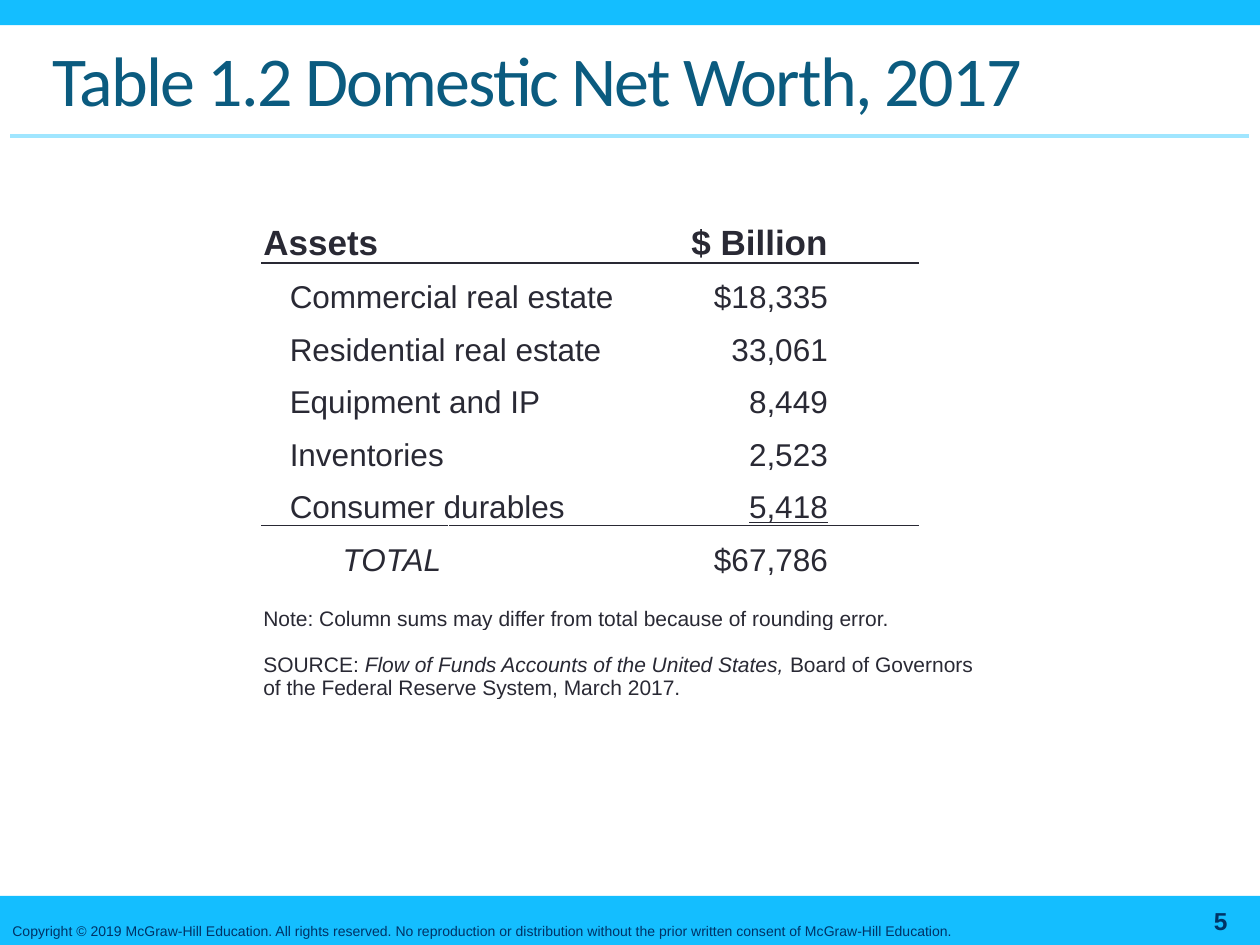
from dataclasses import dataclass

from lxml import etree
from pptx import Presentation
from pptx.dml.color import RGBColor
from pptx.enum.shapes import MSO_CONNECTOR, MSO_SHAPE
from pptx.enum.text import MSO_ANCHOR, PP_ALIGN
from pptx.oxml.ns import qn
from pptx.util import Inches, Pt

RECTANGLE = MSO_SHAPE.RECTANGLE
STRAIGHT = MSO_CONNECTOR.STRAIGHT
LEFT, RIGHT = PP_ALIGN.LEFT, PP_ALIGN.RIGHT
MIDDLE, BOTTOM = MSO_ANCHOR.MIDDLE, MSO_ANCHOR.BOTTOM

COLORS = {
    "band": "14BEFF",
    "rule": "A0E6FF",
    "footer": "003366",
    "title": "0B5B7F",
    "body": "292934",
}
COLUMN_WIDTHS = (1.48, 1.58, 1.44, 0.72, 0.45)
ROW_HEIGHT = 0.417
SOURCE_HEIGHT = 0.55
RULED_COLUMNS = 4
VALUE_COLUMN = 2


@dataclass(frozen=True)
class AssetRow:
    label: str
    value: str
    indent: float = 0.21
    label_columns: int = 2
    size: int = 18
    bold: bool = False
    italic: bool = False
    underline: bool = False
    ruled_below: bool = False


@dataclass(frozen=True)
class Band:
    top: float
    height: float


ASSET_ROWS = (
    AssetRow("Assets", "$ Billion", indent=0, label_columns=1, size=20, bold=True, ruled_below=True),
    AssetRow("Commercial real estate", "$18,335"),
    AssetRow("Residential real estate", "33,061"),
    AssetRow("Equipment and IP", "8,449"),
    AssetRow("Inventories", "2,523", label_columns=1),
    AssetRow("Consumer durables", "5,418", underline=True, ruled_below=True),
    AssetRow("TOTAL", "$67,786", indent=0.63, label_columns=1, italic=True),
)
NOTES = (
    (("Note: Column sums may differ from total because of rounding error.", False),),
    (
        ("SOURCE: ", False),
        ("Flow of Funds Accounts of the United States,", True),
        (" Board of Governors of the Federal Reserve System, March 2017.", False),
    ),
)
BANDS = (Band(0, 0.2), Band(7.11, 0.4))


def write_text(paragraph, text, *, size, color="body", name="Arial", bold=False,
               italic=False, underline=False, align=LEFT, spacing=0):
    paragraph.alignment = align
    run = paragraph.add_run()
    run.text = text
    font = run.font
    font.size, font.name = Pt(size), name
    font.bold, font.italic, font.underline = bold, italic, underline
    font.color.rgb = RGBColor.from_string(COLORS[color])
    if spacing:
        run._r.get_or_add_rPr().set("spc", str(spacing * 100))


def add_text(slide, bounds: tuple, text: str, anchor, **text_format) -> None:
    frame = slide.shapes.add_textbox(*map(Inches, bounds)).text_frame
    frame.word_wrap = True
    frame.vertical_anchor = anchor
    write_text(frame.paragraphs[0], text, **text_format)


def add_band(slide, band: Band) -> None:
    shape = slide.shapes.add_shape(RECTANGLE, 0, Inches(band.top), Inches(10), Inches(band.height))
    shape.shadow.inherit = False
    shape.fill.solid()
    shape.fill.fore_color.rgb = RGBColor.from_string(COLORS["band"])
    shape.line.fill.background()


def add_title_rule(slide) -> None:
    connector = slide.shapes.add_connector(
        STRAIGHT, Inches(0.08), Inches(1.08), Inches(9.91), Inches(1.08))
    connector.line.color.rgb = RGBColor.from_string(COLORS["rule"])
    connector.line.width = Pt(2.25)
    etree.SubElement(connector._element.spPr, qn("a:effectLst"))


def set_border(cell, tag: str) -> None:
    line = etree.Element(qn(tag), w=str(Pt(1)))
    fill = etree.SubElement(line, qn("a:solidFill"))
    etree.SubElement(fill, qn("a:srgbClr"), val=COLORS["body"])
    cell._tc.get_or_add_tcPr().insert(0, line)


def prepare_cell(cell) -> None:
    cell.fill.background()
    cell.vertical_anchor = BOTTOM
    cell.margin_left = cell.margin_right = cell.margin_top = Inches(0.01)
    cell.margin_bottom = 0


def fill_asset_row(table, index: int, row: AssetRow) -> None:
    label = table.cell(index, 0)
    if row.label_columns > 1:
        label.merge(table.cell(index, row.label_columns - 1))
    label.margin_left = Inches(0.01 + row.indent)
    write_text(label.text_frame.paragraphs[0], row.label,
               size=row.size, bold=row.bold, italic=row.italic)
    write_text(table.cell(index, VALUE_COLUMN).text_frame.paragraphs[0], row.value,
               size=row.size, bold=row.bold, underline=row.underline, align=RIGHT)
    if row.ruled_below:
        for column in range(RULED_COLUMNS):
            set_border(table.cell(index, column), "a:lnB")
            set_border(table.cell(index + 1, column), "a:lnT")


def add_net_worth_table(slide) -> None:
    row_count = len(ASSET_ROWS) + len(NOTES)
    table = slide.shapes.add_table(
        row_count, len(COLUMN_WIDTHS), Inches(2.08), Inches(1.67),
        Inches(sum(COLUMN_WIDTHS)), Inches(ROW_HEIGHT * row_count)).table
    table.first_row = table.horz_banding = False
    for column, width in zip(table.columns, COLUMN_WIDTHS):
        column.width = Inches(width)
    for row in table.rows:
        row.height = Inches(ROW_HEIGHT)
    table.rows[row_count - 1].height = Inches(SOURCE_HEIGHT)
    for cell in table.iter_cells():
        prepare_cell(cell)
    for index, row in enumerate(ASSET_ROWS):
        fill_asset_row(table, index, row)
    for index, parts in enumerate(NOTES, len(ASSET_ROWS)):
        cell = table.cell(index, 0)
        cell.merge(table.cell(index, len(COLUMN_WIDTHS) - 1))
        for text, italic in parts:
            write_text(cell.text_frame.paragraphs[0], text, size=12, italic=italic)


def main() -> None:
    presentation = Presentation()
    presentation.slide_width, presentation.slide_height = Inches(10), Inches(7.5)
    slide = presentation.slides.add_slide(presentation.slide_layouts[6])
    for band in BANDS:
        add_band(slide, band)
    add_title_rule(slide)
    add_text(slide, (8.67, 7.13, 1.17, 0.36), "5", MIDDLE,
             size=14, color="footer", bold=True, align=RIGHT)
    add_text(slide, (0, 7.22, 10, 0.28),
             "Copyright © 2019 McGraw-Hill Education. All rights reserved. No reproduction "
             "or distribution without the prior written consent of McGraw-Hill Education.",
             BOTTOM, size=8, color="footer")
    add_text(slide, (0.32, 0.17, 9.37, 0.91), "Table 1.2 Domestic Net Worth, 2017", MIDDLE,
             size=40, color="title", name="Calibri", spacing=-1)
    add_net_worth_table(slide)
    presentation.save("out.pptx")


if __name__ == "__main__":
    main()
